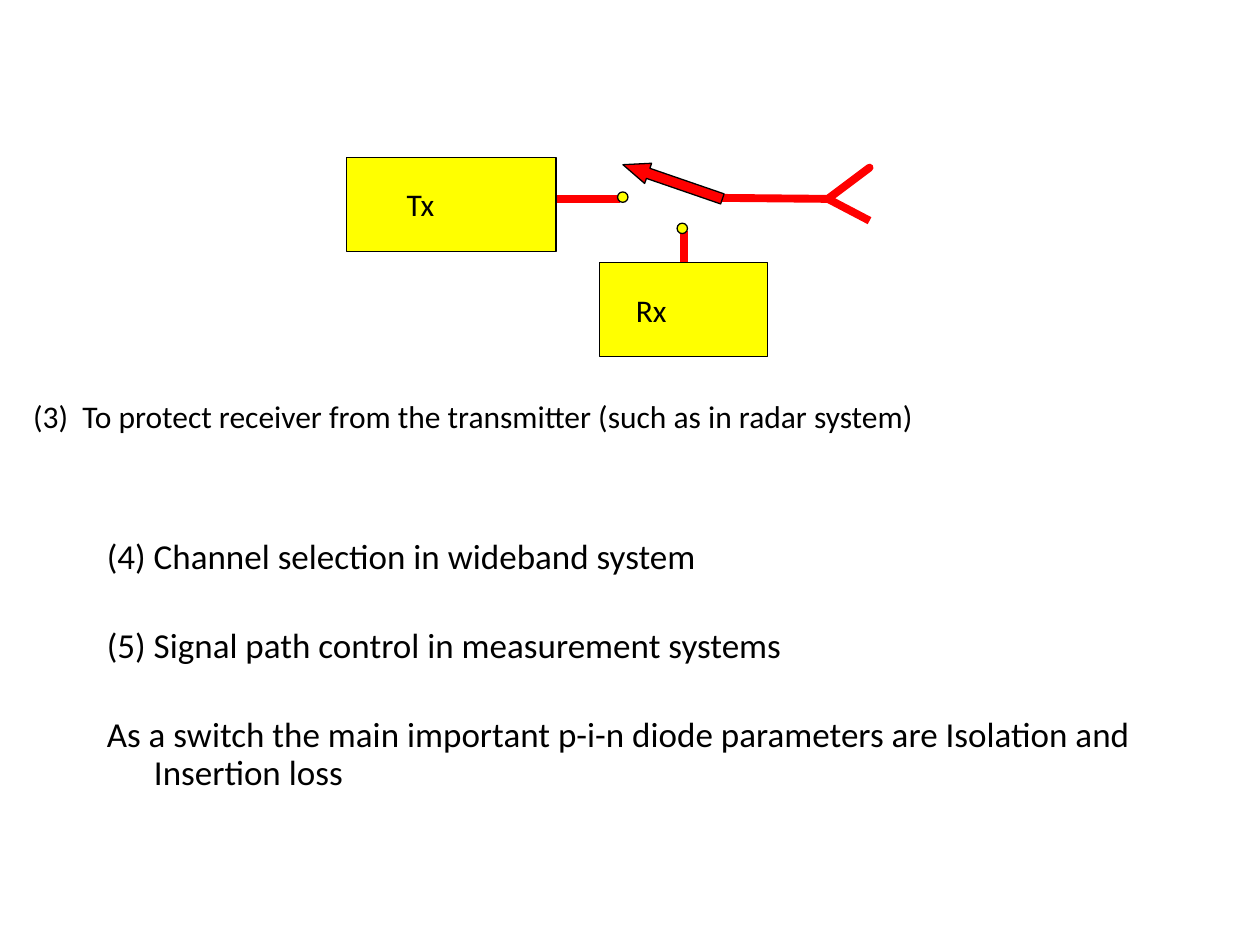
import pptx
import pptx.dml.color
import pptx.enum.shapes
import pptx.enum.text
import pptx.oxml
import pptx.oxml.ns
import pptx.util
from pptx.util import Cm, Pt

SHAPES = pptx.enum.shapes.MSO_SHAPE
FONT, BLACK, RED, YELLOW = "Calibri", "000000", "FF0000", "FFFF00"
POINTS = [
    "(4) Channel selection in wideband system",
    "(5) Signal path control in measurement systems",
    "As a switch the main important p-i-n diode parameters are Isolation and Insertion loss",
]


def rgb(value):
    """Turn a hex string into a colour."""
    return pptx.dml.color.RGBColor.from_string(value)


def add_run(p, text, size):
    """Add one black run to a paragraph."""
    r = p.add_run()
    r.text = text
    r.font.name, r.font.size = FONT, Pt(size)
    r.font.color.rgb = rgb(BLACK)


def set_hanging(p, indent):
    """Give a paragraph a hanging indent without a bullet."""
    pPr = p._p.get_or_add_pPr()
    pPr.set("marL", str(indent))
    pPr.set("indent", str(-indent))
    pPr.append(pptx.oxml.parse_xml(f"<a:buNone {pptx.oxml.ns.nsdecls('a')}/>"))


def set_line(sp, color, width):
    """Set the line colour and width of a shape."""
    sp.line.color.rgb = rgb(color)
    sp.line.width = Pt(width)


def add_shape(s, kind, left, top, width, height, fill):
    """Add a filled preset shape with a thin black outline."""
    sp = s.shapes.add_shape(kind, Cm(left), Cm(top), Cm(width), Cm(height))
    sp.shadow.inherit = False
    sp.fill.solid()
    sp.fill.fore_color.rgb = rgb(fill)
    set_line(sp, BLACK, 0.75)
    return sp


def add_block(s, text, left, top, width, height, inset):
    """Add a labelled circuit block."""
    sp = add_shape(s, SHAPES.RECTANGLE, left, top, width, height, YELLOW)
    tf = sp.text_frame
    tf.margin_left = Cm(inset)
    tf.vertical_anchor = pptx.enum.text.MSO_ANCHOR.MIDDLE
    p = tf.paragraphs[0]
    p.alignment = pptx.enum.text.PP_ALIGN.LEFT
    add_run(p, text, 18)


def add_wire(s, x1, y1, x2, y2):
    """Add a thick red straight wire."""
    sp = s.shapes.add_connector(
        pptx.enum.shapes.MSO_CONNECTOR.STRAIGHT, Cm(x1), Cm(y1), Cm(x2), Cm(y2))
    set_line(sp, RED, 4.5)
    sp._element.spPr.append(
        pptx.oxml.parse_xml(f"<a:effectLst {pptx.oxml.ns.nsdecls('a')}/>"))


def add_contact(s, left, top):
    """Add a round switch contact."""
    add_shape(s, SHAPES.OVAL, left, top, 0.21, 0.21, YELLOW)


def add_antenna(s):
    """Add the feed line that forks into an antenna."""
    fork = (Cm(16.69), Cm(4.01))
    builder = s.shapes.build_freeform(Cm(14.53), Cm(3.99), scale=1.0)
    builder.add_line_segments(
        [fork, (Cm(17.53), Cm(3.38)), fork, (Cm(17.53), Cm(4.45))], close=False)
    sp = builder.convert_to_shape()
    sp.shadow.inherit = False
    sp.fill.background()
    set_line(sp, RED, 4.5)


def add_switch_arm(s):
    """Add the tilted arrow of the switch."""
    sp = add_shape(s, SHAPES.LEFT_ARROW, 12.5, 3.45, 2.12, 0.43, RED)
    sp.adjustments[0], sp.adjustments[1] = 0.5, 1.25
    sp.rotation = 19


def fill_body(s):
    """Place the body placeholder and write the points."""
    sp = s.placeholders[1]
    sp.left, sp.top, sp.width, sp.height = Cm(1.9), Cm(2.54), Cm(21.6), Cm(14.4)
    tf = sp.text_frame
    tf.margin_top = Cm(8.33)
    for i, text in enumerate(POINTS):
        p = tf.add_paragraph() if i else tf.paragraphs[0]
        p.line_spacing = 0.9
        p.space_before = Pt(29.4 if i else 0)
        set_hanging(p, Cm(0.95))
        add_run(p, text, 20)


def add_caption(s, text):
    """Add the line of text below the diagram."""
    tf = s.shapes.add_textbox(Cm(0.42), Cm(7.87), Cm(24.98), Cm(1.2)).text_frame
    tf.word_wrap = True
    set_hanging(tf.paragraphs[0], Cm(1.27))
    add_run(tf.paragraphs[0], text, 18)


def main():
    """Build the slide and save it."""
    prs = pptx.Presentation()
    prs.slide_width, prs.slide_height = Cm(25.4), Cm(19.05)
    s = prs.slides.add_slide(prs.slide_layouts[1])
    title = s.shapes.title._element
    title.getparent().remove(title)
    fill_body(s)
    add_caption(s, "(3)  To protect receiver from the transmitter (such as in radar system)")
    add_antenna(s)
    add_block(s, "Rx", 12.09, 5.29, 3.39, 1.9, 0.73)
    add_wire(s, 13.78, 4.65, 13.78, 5.29)
    add_contact(s, 13.65, 4.5)
    add_block(s, "Tx", 6.98, 3.17, 4.23, 1.9, 1.22)
    add_wire(s, 12.5, 4.02, 11.22, 4.02)
    add_contact(s, 12.45, 3.87)
    add_switch_arm(s)
    prs.save("out.pptx")


if __name__ == "__main__":
    main()
